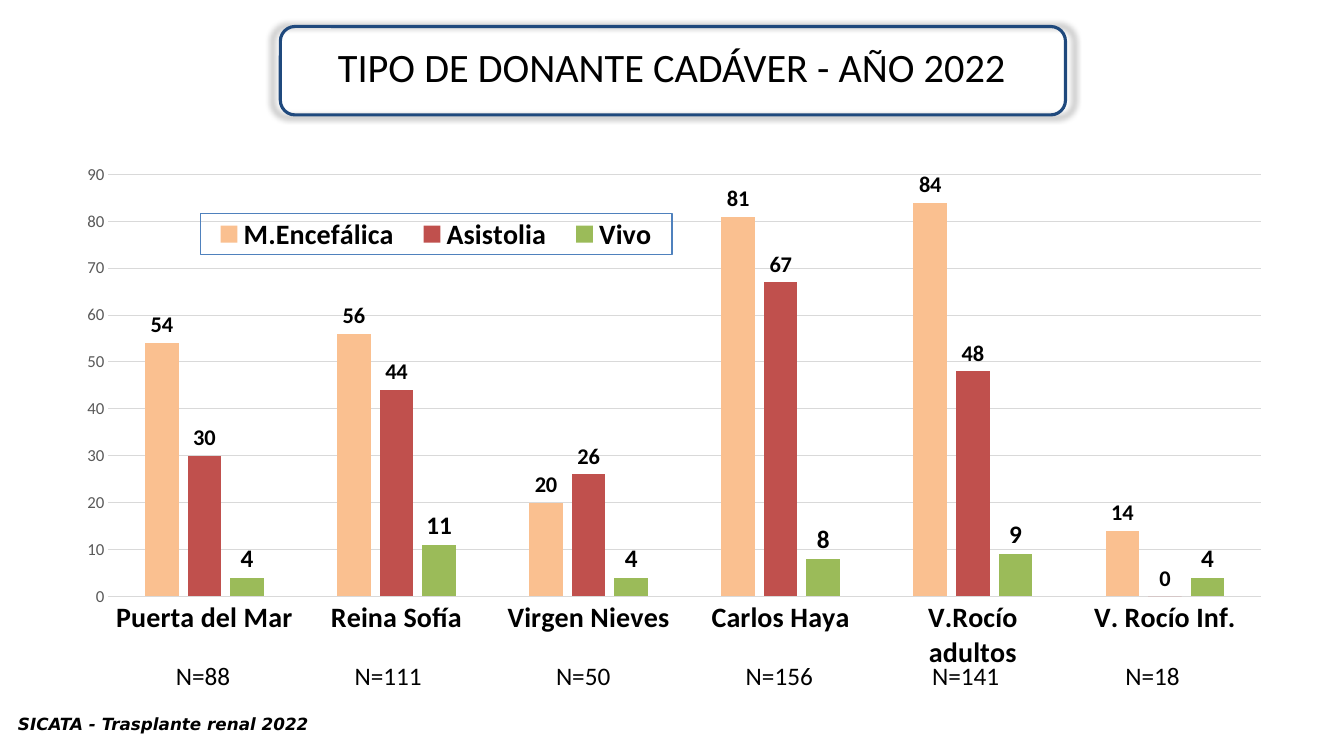
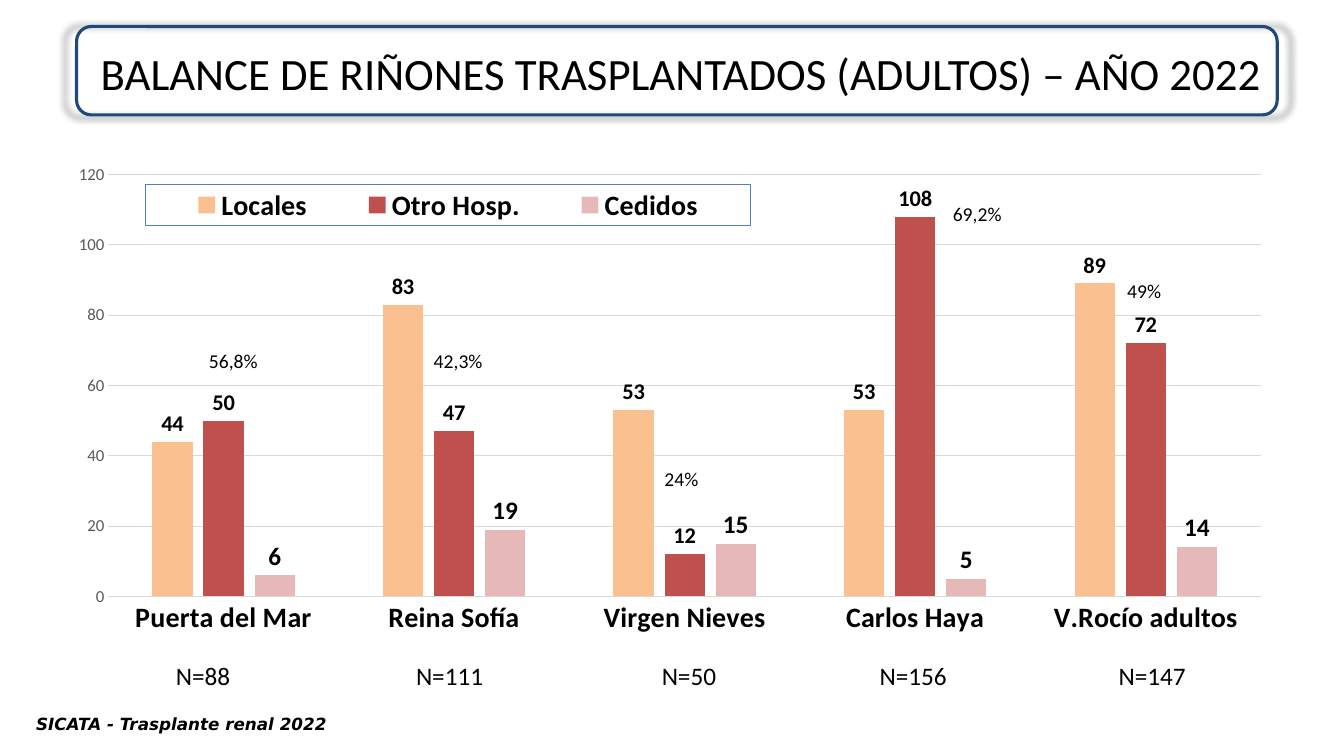
from dataclasses import dataclass

from pptx import Presentation
from pptx.chart.data import CategoryChartData
from pptx.dml.color import RGBColor
from pptx.enum.chart import (XL_CHART_TYPE as ChartType, XL_LABEL_POSITION as LabelPosition,
                             XL_LEGEND_POSITION as LegendPosition, XL_TICK_MARK as TickMark)
from pptx.enum.shapes import MSO_SHAPE as Preset
from pptx.enum.text import MSO_ANCHOR as Anchor, MSO_AUTO_SIZE as AutoSize, PP_ALIGN as Align
from pptx.oxml import parse_xml
from pptx.oxml.ns import nsdecls
from pptx.util import Inches, Pt


@dataclass(frozen=True)
class Theme:
    body_font: str = "Calibri"
    footer_font: str = "DejaVu Sans"
    ink: str = "000000"
    muted: str = "595959"
    rule: str = "D9D9D9"
    frame: str = "1F497D"
    legend_line: str = "4F81BD"
    peach: str = "FAC090"
    red: str = "C0504D"
    green: str = "9BBB59"
    pink: str = "E6B9B8"
    category_size: float = 20
    total_size: float = 18
    bar_label_sizes: tuple = (16, 16, 18)
    percent_size: float = 14
    small_size: float = 12


THEME = Theme()


@dataclass(frozen=True)
class Box:
    left: float
    top: float
    width: float
    height: float

    def share(self, left, top, width, height):
        """Return the box inside this one, given in percent of its size."""
        return Box(self.left + self.width * left / 100, self.top + self.height * top / 100,
                   self.width * width / 100, self.height * height / 100)

    @property
    def emu(self):
        return [Inches(n) for n in (self.left, self.top, self.width, self.height)]


PAGE = Box(0, 0, 13.33, 7.5)
CHART_AREA = PAGE.share(5, 20.67, 90, 68.67)


def rgb(color):
    return RGBColor.from_string(color)


def style_font(font, size, color=THEME.ink, bold=False, italic=False, name=THEME.body_font):
    font.name, font.size, font.bold, font.italic = name, Pt(size), bold, italic
    font.color.rgb = rgb(color)


def style_line(line, color, width=0.75):
    line.color.rgb = rgb(color)
    line.width = Pt(width)


def add_label(slide, box, text, size, align=Align.CENTER, wrap=False, **style):
    frame = slide.shapes.add_textbox(*box.emu).text_frame
    frame.word_wrap = wrap
    frame.text = text
    paragraph = frame.paragraphs[0]
    paragraph.alignment = align
    style_font(paragraph.runs[0].font, size, **style)


def add_title(slide, box, text, size):
    title = slide.shapes.title
    title.left, title.top, title.width, title.height = box.emu
    frame = title.text_frame
    frame.text = text
    frame.word_wrap, frame.auto_size = True, AutoSize.NONE
    frame.vertical_anchor = Anchor.MIDDLE
    frame.paragraphs[0].alignment = Align.CENTER
    style_font(frame.paragraphs[0].runs[0].font, size)


def add_title_frame(slide, box):
    outline = slide.shapes.add_shape(Preset.ROUNDED_RECTANGLE, *box.emu)
    outline.fill.background()
    style_line(outline.line, THEME.frame, 2.25)
    outline.shadow.inherit = False
    outline.element.spPr.effectLst.append(parse_xml(
        f'<a:outerShdw {nsdecls("a")} blurRad="{Pt(5)}" sx="102000" sy="102000" '
        f'algn="ctr" rotWithShape="0"><a:srgbClr val="{THEME.ink}">'
        '<a:alpha val="40000"/></a:srgbClr></a:outerShdw>'))


def manual_layout(shares, target=""):
    """Build the chart layout element for shares (x, y, w, h) of the chart."""
    x, y, w, h = shares
    return parse_xml(
        f'<c:layout {nsdecls("c")}><c:manualLayout>{target}'
        '<c:xMode val="edge"/><c:yMode val="edge"/>'
        f'<c:x val="{x}"/><c:y val="{y}"/><c:w val="{w}"/><c:h val="{h}"/>'
        '</c:manualLayout></c:layout>')


def place_plot(chart, shares):
    area = chart.element.chart.plotArea
    for layout in area.xpath("c:layout"):
        area.remove(layout)
    area.insert(0, manual_layout(shares, '<c:layoutTarget val="inner"/>'))


def add_legend(chart, shares):
    chart.has_legend = True
    legend = chart.legend
    legend.position = LegendPosition.BOTTOM
    legend.include_in_layout = False
    style_font(legend.font, THEME.category_size, bold=True)
    element = legend.font and chart.element.xpath("c:chart/c:legend")[0]
    for layout in element.xpath("c:layout"):
        element.remove(layout)
    element.xpath("c:legendPos")[0].addnext(manual_layout(shares))
    element.xpath("c:txPr")[0].addprevious(parse_xml(
        f'<c:spPr {nsdecls("c", "a")}><a:noFill/><a:ln w="{Pt(0.75)}"><a:solidFill>'
        f'<a:srgbClr val="{THEME.legend_line}"/></a:solidFill></a:ln></c:spPr>'))


def style_axes(chart, top, step):
    hospitals, counts = chart.category_axis, chart.value_axis
    for axis in (hospitals, counts):
        axis.major_tick_mark = axis.minor_tick_mark = TickMark.NONE
    style_font(hospitals.tick_labels.font, THEME.category_size, bold=True)
    style_line(hospitals.format.line, THEME.rule)
    style_font(counts.tick_labels.font, THEME.small_size, THEME.muted)
    counts.format.line.fill.background()
    counts.minimum_scale, counts.maximum_scale, counts.major_unit = 0, top, step
    counts.has_major_gridlines = True
    style_line(counts.major_gridlines.format.line, THEME.rule)


def add_bars(slide, box, hospitals, series, axis, legend_shares):
    data = CategoryChartData()
    data.categories = hospitals
    for name, _, values in series:
        data.add_series(name, values)
    chart = slide.shapes.add_chart(ChartType.COLUMN_CLUSTERED, *box.emu, data).chart
    chart.has_title = False
    style_font(chart.font, 10)
    plot = chart.plots[0]
    plot.gap_width, plot.overlap, plot.vary_by_categories = 219, -27, False
    for bars, (_, color, _), size in zip(plot.series, series, THEME.bar_label_sizes):
        bars.format.fill.solid()
        bars.format.fill.fore_color.rgb = rgb(color)
        labels = bars.data_labels
        labels.show_value, labels.position = True, LabelPosition.OUTSIDE_END
        style_font(labels.font, size, bold=True)
    style_axes(chart, *axis)
    place_plot(chart, (0.034, 0.035, 0.953, 0.813))
    add_legend(chart, legend_shares)


def add_totals(slide, box, totals):
    """Set the totals along a row, each centred at its percent of the width."""
    for count, centre in totals:
        add_label(slide, box.share(centre - 3.3, 0, 6.6, 100), f"N={count}", THEME.total_size)


def add_percents(slide, box, percents):
    for text, centre, top in percents:
        add_label(slide, box.share(centre - 2.6, top, 5.2, 4.53), text, THEME.percent_size)


def add_footer(slide, box):
    add_label(slide, box, "SICATA - Trasplante renal 2022", THEME.small_size, Align.LEFT,
              wrap=True, bold=True, italic=True, name=THEME.footer_font)


def add_chart_slide(deck, title, title_size, title_box, frame_box, footer_box,
                    hospitals, series, axis, legend_shares, percents=()):
    slide = deck.slides.add_slide(deck.slide_layouts[5])
    add_title(slide, PAGE.share(*title_box), title, title_size)
    add_bars(slide, CHART_AREA, [name for name, _, _ in hospitals], series, axis, legend_shares)
    add_totals(slide, PAGE.share(0, 86.67, 100, 5.33), [total for _, *total in hospitals])
    add_percents(slide, PAGE, percents)
    add_footer(slide, PAGE.share(*footer_box))
    add_title_frame(slide, PAGE.share(*frame_box))


def main():
    deck = Presentation()
    deck.slide_width, deck.slide_height = Inches(PAGE.width), Inches(PAGE.height)
    add_chart_slide(
        deck, "TIPO DE DONANTE CADÁVER - AÑO 2022", 28.8,
        title_box=(5, 4.8, 90, 8), frame_box=(20.86, 3.5, 58.42, 11.7),
        footer_box=(0.6, 93.73, 31.35, 4),
        hospitals=[("Puerta del Mar", 88, 15.11), ("Reina Sofía", 111, 28.88),
                   ("Virgen Nieves", 50, 43.39), ("Carlos Haya", 156, 57.98),
                   ("V.Rocío adultos", 141, 71.85), ("V. Rocío Inf.", 18, 85.76)],
        series=[("M.Encefálica", THEME.peach, (54, 56, 20, 81, 84, 14)),
                ("Asistolia", THEME.red, (30, 44, 26, 67, 48, 0)),
                ("Vivo", THEME.green, (4, 11, 4, 8, 9, 4))],
        axis=(90, 10), legend_shares=(0.11, 0.11, 0.39, 0.08))
    add_chart_slide(
        deck, "BALANCE DE RIÑONES TRASPLANTADOS (ADULTOS) – AÑO 2022", 32,
        title_box=(5.7, 3.75, 90, 11.75), frame_box=(5.7, 3.5, 89.33, 11.7),
        footer_box=(1.95, 93.73, 26.6, 4),
        hospitals=[("Puerta del Mar", 88, 15.11), ("Reina Sofía", 111, 33.45),
                   ("Virgen Nieves", 50, 51.26), ("Carlos Haya", 156, 67.95),
                   ("V.Rocío adultos", 147, 85.73)],
        series=[("Locales", THEME.peach, (44, 83, 53, 53, 89)),
                ("Otro Hosp.", THEME.red, (50, 47, 12, 108, 72)),
                ("Cedidos", THEME.pink, (6, 19, 15, 5, 14))],
        axis=(120, 20), legend_shares=(0.065, 0.054, 0.5, 0.08),
        percents=[("56,8%", 17.36, 45.47), ("42,3%", 34.09, 45.47), ("24%", 50.7, 61.07),
                  ("69,2%", 72.71, 26), ("49%", 85.13, 36.27)])
    deck.save("out.pptx")


if __name__ == "__main__":
    main()
